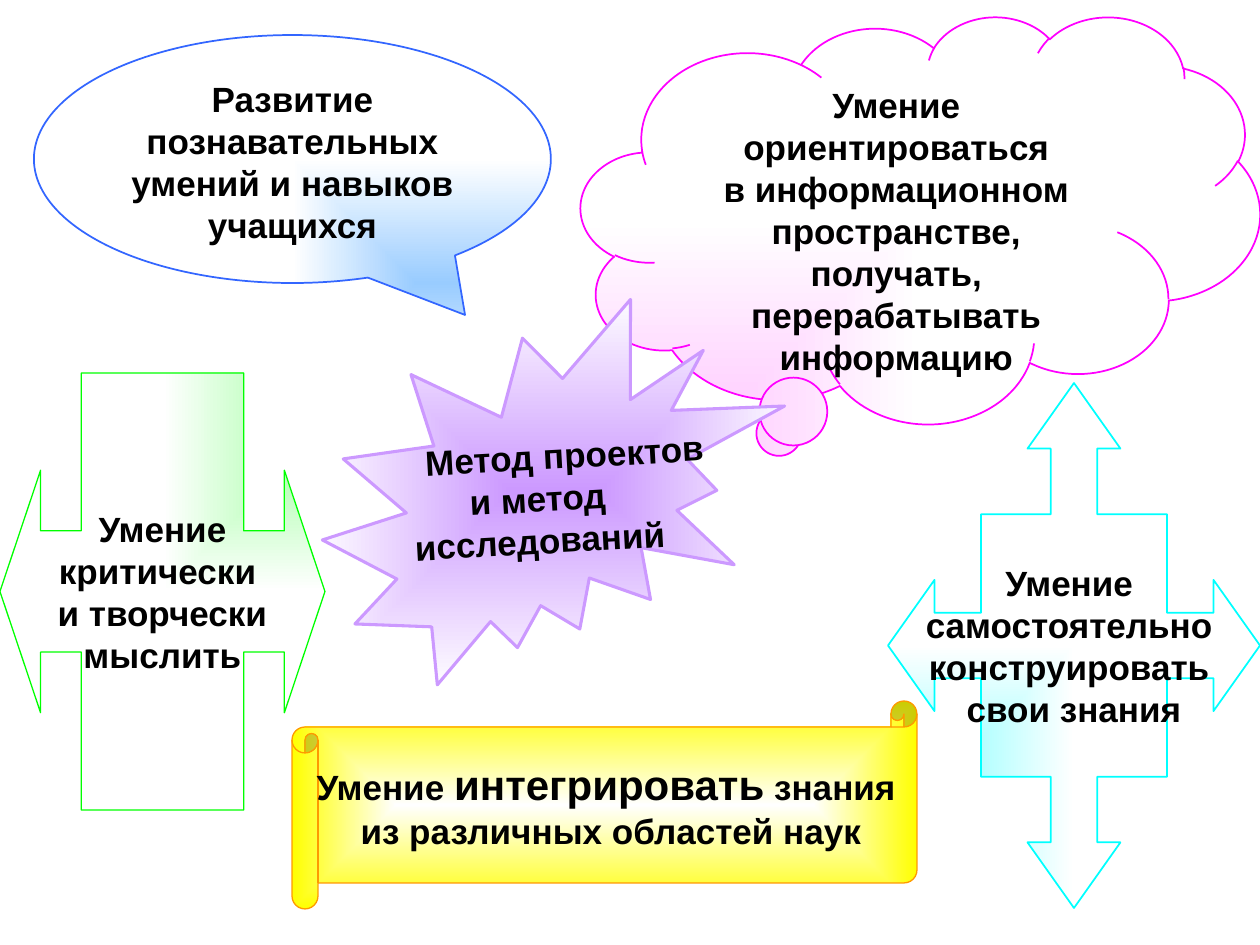
from dataclasses import dataclass

from lxml import etree
from pptx import Presentation
from pptx.dml.color import RGBColor
from pptx.enum.shapes import MSO_SHAPE
from pptx.enum.text import MSO_ANCHOR, PP_ALIGN
from pptx.oxml.ns import qn
from pptx.util import Emu, Pt

ELLIPSE_CALLOUT = MSO_SHAPE.OVAL_CALLOUT
CLOUD_CALLOUT = MSO_SHAPE.CLOUD_CALLOUT
SCROLL = MSO_SHAPE.HORIZONTAL_SCROLL
BURST = MSO_SHAPE.EXPLOSION2
ARROW_CALLOUT = MSO_SHAPE.LEFT_RIGHT_ARROW_CALLOUT
CENTER = PP_ALIGN.CENTER
TOP, MIDDLE = MSO_ANCHOR.TOP, MSO_ANCHOR.MIDDLE


@dataclass(frozen=True)
class Theme:
    """Colours as (gradient start, gradient end, outline), and type sizes."""
    font: str = "Arial"
    ink: str = "000000"
    body: int = 20
    emphasis: int = 24
    blue: tuple = ("99CCFF", "FFFFFF", "3366FF")
    pink: tuple = ("FFCCFF", "FFFFFF", "FF00FF")
    yellow: tuple = ("FFFFFF", "FFFF00", "FF9900")
    cyan: tuple = ("66FFFF", "FFFFFF", "00FFFF")
    violet: tuple = ("CC99FF", "FFFFFF", "CC99FF")
    green: tuple = ("99FF99", "FFFFFF", "00FF00")


THEME = Theme()


def px(length):
    """Convert pixels to EMU."""
    return Emu(round(length * 914400 / 126))


def paint(figure, colors, focus, line_width, path_kind="rect"):
    """Give a figure a path gradient with its focus (l, t, r, b) and an outline."""
    figure.shadow.inherit = False
    figure.fill.gradient()
    for stop, color, position in zip(figure.fill.gradient_stops, colors, (0, 1)):
        stop.color.rgb = RGBColor.from_string(color)
        stop.position = position
    gradient = figure._element.spPr.find(qn("a:gradFill"))
    gradient.remove(gradient.find(qn("a:lin")))
    spread = etree.SubElement(gradient, qn("a:path"), {"path": path_kind})
    etree.SubElement(spread, qn("a:fillToRect"),
                     {side: str(share * 1000) for side, share in zip("ltrb", focus)})
    figure.line.color.rgb = RGBColor.from_string(colors[2])
    figure.line.width = Pt(line_width)


def write(figure, lines, anchor=MIDDLE, wrap=False):
    """Write centred bold lines, each a list of (text, size) runs."""
    frame = figure.text_frame
    for name, value in {"word_wrap": wrap, "vertical_anchor": anchor}.items():
        setattr(frame, name, value)
    for index, pieces in enumerate(lines):
        paragraph = frame.add_paragraph() if index else frame.paragraphs[0]
        paragraph.alignment = CENTER
        for text, size in pieces:
            run = paragraph.add_run()
            run.text = text
            for name, value in {"name": THEME.font, "size": Pt(size), "bold": True}.items():
                setattr(run.font, name, value)
            run.font.color.rgb = RGBColor.from_string(THEME.ink)


def body(*texts):
    """Make one body-size run for each line."""
    return [[(text, THEME.body)] for text in texts]


def add_preset(slide, box, kind, adjustments=()):
    """Place a preset shape in the box with its adjustments."""
    figure = slide.shapes.add_shape(kind, *map(px, box))
    for index, value in enumerate(adjustments):
        figure.adjustments[index] = value
    return figure


def add_skills_bubble(slide, box):
    """Draw the elliptical speech bubble on learning skills."""
    bubble = add_preset(slide, box, ELLIPSE_CALLOUT, (0.334, 0.629))
    paint(bubble, THEME.blue, (100, 100, 0, 0), 1)
    write(bubble, body("Развитие познавательных умений и навыков учащихся"), TOP, True)


def add_information_cloud(slide, box):
    """Draw the thought cloud on handling information."""
    cloud = add_preset(slide, box, CLOUD_CALLOUT, (-0.211, 0.532))
    paint(cloud, THEME.pink, (0, 100, 100, 0), 1)
    write(cloud, body("Умение ориентироваться", "в информационном",
                      "пространстве, получать, перерабатывать информацию"), TOP, True)


def add_integration_scroll(slide, box):
    """Draw the scroll on integrating knowledge."""
    scroll = add_preset(slide, box, SCROLL, (0.125,))
    paint(scroll, THEME.yellow, (50, 50, 50, 50), 0.75)
    heading = [("Умение ", THEME.body), ("интегрировать", THEME.emphasis),
               (" знания ", THEME.body)]
    write(scroll, [heading] + body("из различных областей наук"))


def add_knowledge_cross(slide, box):
    """Draw the four-way arrow by turning one quarter of its outline on a 16-unit grid."""
    left, top, width, height = box
    quarter = [(8, 0), (6, 2), (7, 2), (7, 4), (4, 4), (4, 7), (2, 7), (2, 6)]
    outline = []
    for _ in range(4):
        outline += quarter
        quarter = [(y, 16 - x) for x, y in quarter]
    corners = [(px(left + width * x / 16), px(top + height * y / 16)) for x, y in outline]
    builder = slide.shapes.build_freeform(*corners[0])
    builder.add_line_segments(corners[1:], close=True)
    cross = builder.convert_to_shape()
    paint(cross, THEME.cyan, (0, 100, 100, 0), 1)
    write(cross, body("Умение ", "самостоятельно ", "конструировать ", "свои знания"))


def add_method_burst(slide, box):
    """Draw the tilted central burst with its first line indented."""
    burst = add_preset(slide, box, BURST)
    burst.rotation = 356.8
    paint(burst, THEME.violet, (50, 50, 50, 50), 1.75, "shape")
    write(burst, body("Метод проектов ", "и метод", "исследований"))
    first_line = burst.text_frame.paragraphs[0]
    first_line._p.get_or_add_pPr().set("marL", str(px(68)))


def add_thinking_arrow(slide, box):
    """Draw the two-way arrow on critical thinking."""
    arrow = add_preset(slide, box, ARROW_CALLOUT, (0.373, 0.373, 0.125, 0.5))
    paint(arrow, THEME.green, (100, 0, 0, 100), 0.75)
    write(arrow, body("Умение", "критически ", "и творчески", "мыслить"))


def main():
    """Build the slide and save it."""
    deck = Presentation()
    deck.slide_width, deck.slide_height = px(1260), px(945)
    slide = deck.slides.add_slide(deck.slide_layouts[6])
    add_skills_bubble(slide, (34, 35, 517, 248))
    add_information_cloud(slide, (581, 16, 679, 407))
    add_integration_scroll(slide, (292, 701, 625, 208))
    add_knowledge_cross(slide, (888, 383, 372, 525))
    add_method_burst(slide, (320, 304, 469, 374))
    add_thinking_arrow(slide, (0, 373, 325, 437))
    deck.save("out.pptx")


if __name__ == "__main__":
    main()
